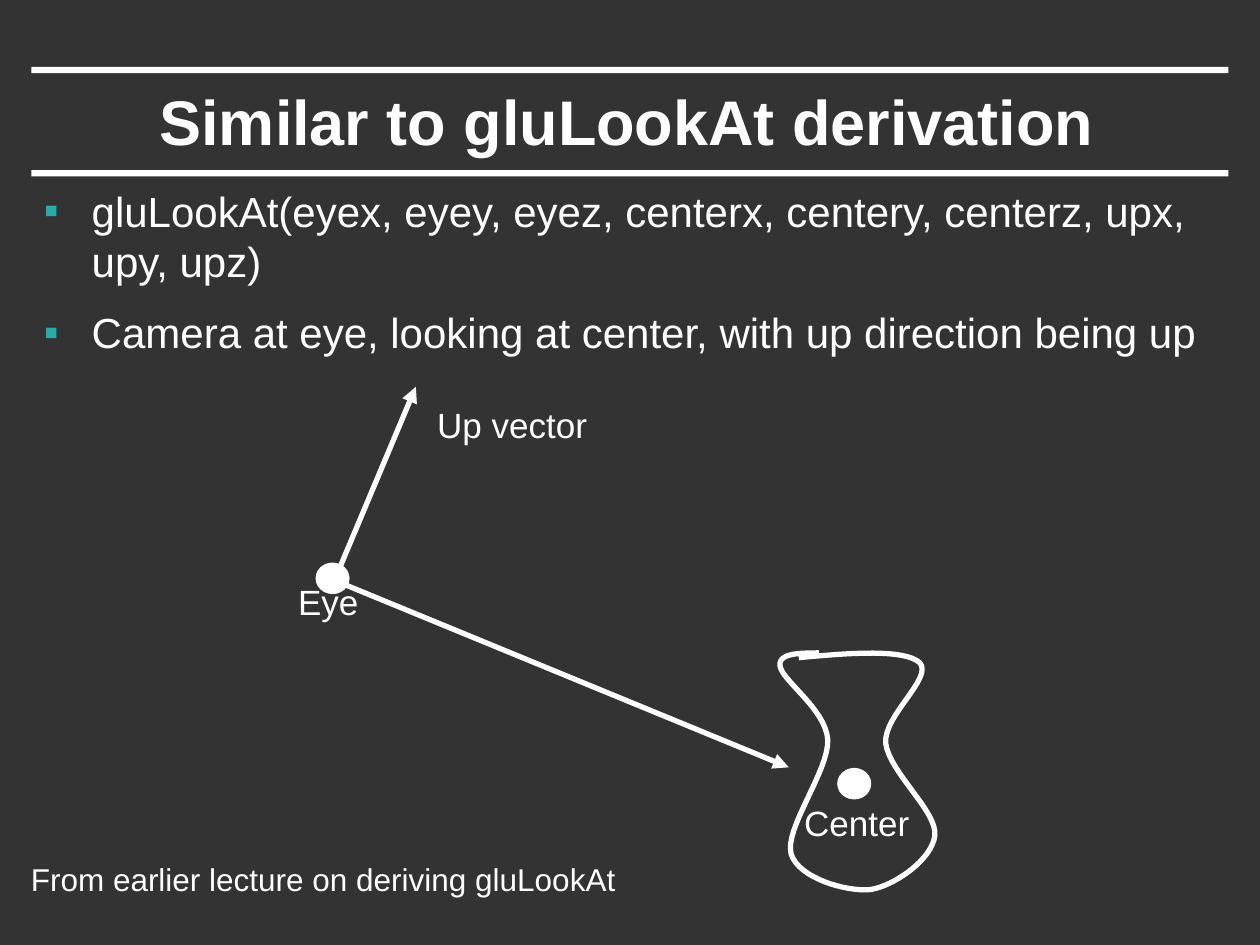
from lxml import etree
from pptx import Presentation
from pptx.dml.color import RGBColor
from pptx.enum.shapes import MSO_CONNECTOR, MSO_SHAPE
from pptx.enum.text import MSO_ANCHOR, MSO_AUTO_SIZE, PP_ALIGN
from pptx.oxml.ns import qn
from pptx.util import Inches, Pt

STRAIGHT = MSO_CONNECTOR.STRAIGHT
RECT, OVAL = MSO_SHAPE.RECTANGLE, MSO_SHAPE.OVAL
MIDDLE = MSO_ANCHOR.MIDDLE
GROW, FIXED = MSO_AUTO_SIZE.SHAPE_TO_FIT_TEXT, MSO_AUTO_SIZE.NONE
LEFT, CENTER = PP_ALIGN.LEFT, PP_ALIGN.CENTER

WHITE, DARK, TEAL = "FFFFFF", "333333", "2AABA8"
TITLE = "Similar to gluLookAt derivation"
POINTS = [
    "gluLookAt(eyex, eyey, eyez, centerx, centery, centerz, upx, upy, upz)",
    "Camera at eye, looking at center, with up direction being up",
]
LABELS = [
    ("Eye", (2.26, 4.56, 0.69, 0.44), 20),
    ("Up vector", (3.36, 3.15, 1.41, 0.44), 20),
    ("Center", (6.28, 6.31, 1.04, 0.44), 20),
    ("From earlier lecture on deriving gluLookAt", (0.12, 6.78, 4.89, 0.4), 18),
]
ARROWS = [((2.64, 4.6), (6.26, 6.09)), ((2.67, 4.57), (3.3, 3.07))]
DOTS = [(6.65, 6.1), (2.51, 4.47)]
START = (6.34, 5.22)
CURVES = [
    ((6.76, 5.18), (7.18, 5.15), (7.3, 5.26)),
    ((7.41, 5.38), (7.01, 5.68), (7.03, 5.9)),
    ((7.06, 6.13), (7.44, 6.44), (7.42, 6.63)),
    ((7.4, 6.82), (7.1, 7.03), (6.91, 7.06)),
    ((6.72, 7.08), (6.34, 6.97), (6.28, 6.78)),
    ((6.22, 6.58), (6.58, 6.12), (6.57, 5.87)),
    ((6.55, 5.62), (6.2, 5.4), (6.19, 5.28)),
    ((6.18, 5.16), (6.45, 5.19), (6.5, 5.18)),
]


def color(code):
    """Turn a hex string into a colour."""
    return RGBColor.from_string(code)


def box(values):
    """Turn numbers into a list of lengths."""
    return [Inches(value) for value in values]


def style(para, size, align, bold=False):
    """Format a paragraph and its runs."""
    para.alignment = align
    for run in para.runs:
        run.font.name = "Arial"
        run.font.size = Pt(size)
        run.font.bold = bold
        run.font.color.rgb = color(WHITE)


def stroke(line, width):
    """Give a line its white colour and width."""
    line.color.rgb = color(WHITE)
    line.width = Pt(width)


def add_title(slide):
    """Fill and place the title."""
    title = slide.shapes.title
    title.left, title.top, title.width, title.height = box((0.74, 0.58, 8.47, 0.75))
    frame = title.text_frame
    frame.text = TITLE
    frame.auto_size = FIXED
    frame.vertical_anchor = MIDDLE
    style(frame.paragraphs[0], 36, CENTER, True)


def add_bullet(para):
    """Give a paragraph a teal square bullet and a hanging indent."""
    props = para._p.get_or_add_pPr()
    indent = Inches(0.38)
    props.set("marL", str(indent))
    props.set("indent", str(-indent))
    tint = etree.SubElement(props, qn("a:buClr"))
    etree.SubElement(tint, qn("a:srgbClr"), val=TEAL)
    etree.SubElement(props, qn("a:buFont"), typeface="Arial")
    etree.SubElement(props, qn("a:buChar"), char="▪")


def add_list(slide):
    """Add the bulleted points."""
    frame = slide.shapes.add_textbox(*box((0.25, 1.42, 9.57, 6.47))).text_frame
    frame.word_wrap = True
    frame.text = "\n".join(POINTS)
    for index, para in enumerate(frame.paragraphs):
        style(para, 24, LEFT)
        para.space_before = Pt(12 if index else 0)
        add_bullet(para)


def add_label(slide, text, place, size):
    """Add a one-line label."""
    frame = slide.shapes.add_textbox(*box(place)).text_frame
    frame.text = text
    frame.word_wrap = False
    frame.auto_size = GROW
    style(frame.paragraphs[0], size, CENTER)


def add_solid(slide, kind, place):
    """Add a white preset shape without outline."""
    shape = slide.shapes.add_shape(kind, *box(place))
    shape.shadow.inherit = False
    shape.fill.solid()
    shape.fill.fore_color.rgb = color(WHITE)
    shape.line.fill.background()
    return shape


def add_arrow(slide, start, end):
    """Add a white arrow that points at its end."""
    arrow = slide.shapes.add_connector(STRAIGHT, *box(start + end))
    stroke(arrow.line, 3)
    etree.SubElement(arrow.line._get_or_add_ln(), qn("a:tailEnd"), type="triangle")
    etree.SubElement(arrow._element.spPr, qn("a:effectLst"))


def trace(start, curves, steps=16):
    """List points along a chain of cubic curves."""
    points = []
    for one, two, end in curves:
        for step in range(1, steps + 1):
            t = step / steps
            u = 1 - t
            points.append(box(
                u**3 * a + 3 * u * u * t * b + 3 * u * t * t * c + t**3 * d
                for a, b, c, d in zip(start, one, two, end)
            ))
        start = end
    return points


def add_outline(slide):
    """Add the hourglass outline of the viewed object."""
    pen = slide.shapes.build_freeform(*box(START))
    pen.add_line_segments(trace(START, CURVES), close=False)
    shape = pen.convert_to_shape()
    shape.shadow.inherit = False
    shape.fill.background()
    stroke(shape.line, 3)


def main():
    """Build the slide and save it."""
    deck = Presentation()
    deck.slide_width, deck.slide_height = Inches(10), Inches(7.5)
    slide = deck.slides.add_slide(deck.slide_layouts[5])
    slide.background.fill.solid()
    slide.background.fill.fore_color.rgb = color(DARK)
    for top in (1.35, 0.53):
        add_solid(slide, RECT, (0.25, top, 9.5, 0.05))
    add_title(slide)
    add_list(slide)
    add_outline(slide)
    for start, end in ARROWS:
        add_arrow(slide, start, end)
    for label in LABELS:
        add_label(slide, *label)
    for left, top in DOTS:
        dot = add_solid(slide, OVAL, (left, top, 0.26, 0.24))
        stroke(dot.line, 0.75)
    deck.save("out.pptx")


if __name__ == "__main__":
    main()
